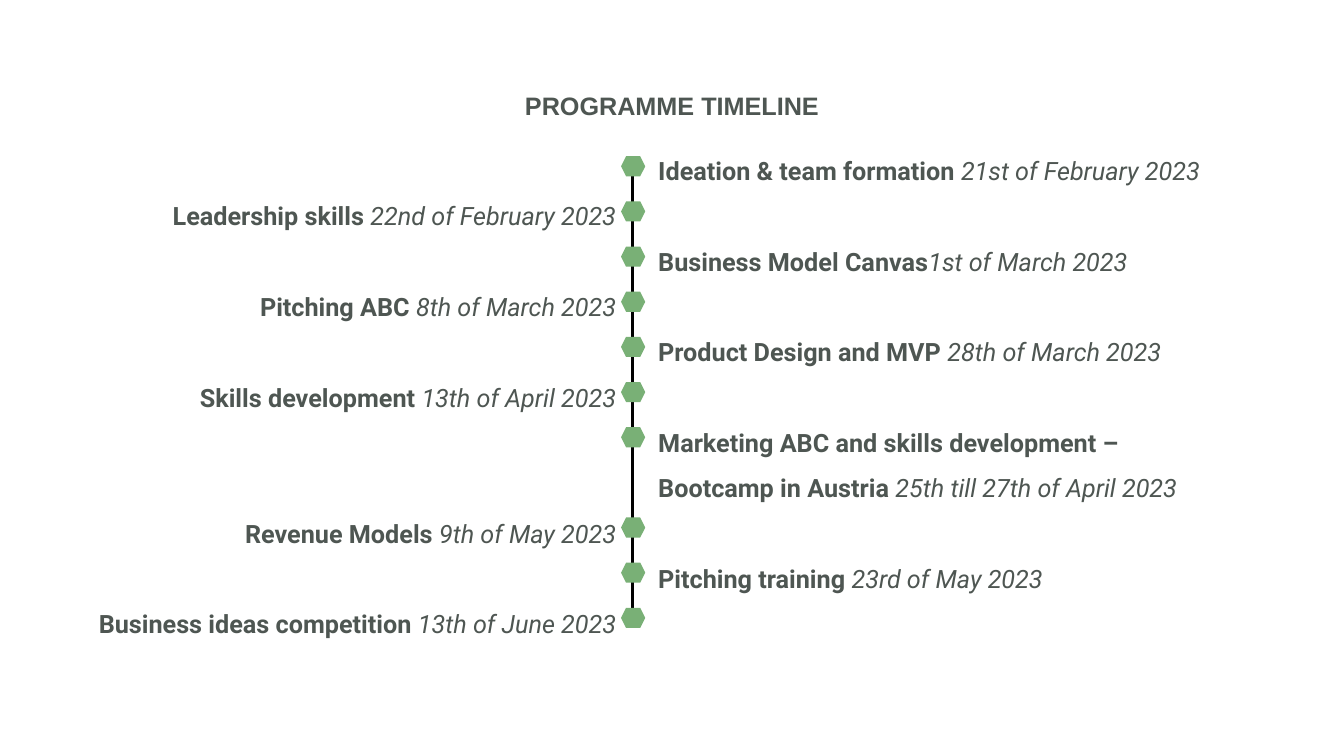
from dataclasses import dataclass

from lxml.etree import SubElement
from pptx import Presentation
from pptx.dml.color import RGBColor
from pptx.enum.shapes import MSO_CONNECTOR, MSO_SHAPE
from pptx.enum.text import MSO_ANCHOR, MSO_AUTO_SIZE, PP_ALIGN
from pptx.oxml.ns import qn
from pptx.util import Inches, Pt


@dataclass(frozen=True)
class Theme:
    """Colours, fonts and type sizes of the slide."""
    ink: RGBColor = RGBColor(0x4E, 0x56, 0x52)
    marker: RGBColor = RGBColor(0x79, 0xB0, 0x76)
    axis: RGBColor = RGBColor(0, 0, 0)
    heading_font: str = "Arial"
    body_font: str = "Roboto"
    size: float = 18
    line_spacing: float = 1.5
    row_pitch: float = 32.4


THEME = Theme()
MARKER_TOP, MARKER_PITCH = 1.55, 4.48 / 10

RIGHT_MILESTONES = [
    (0, "Ideation & team formation ", "21st of February 2023"),
    (2, "Business Model Canvas", "1st of March 2023"),
    (4, "Product Design and MVP ", "28th of March 2023"),
    (6, "Marketing ABC and skills development –", ""),
    (7, "Bootcamp in Austria ", "25th till 27th of April 2023"),
    (9, "Pitching training ", "23rd of May 2023"),
]
LEFT_MILESTONES = [
    (1, "Leadership skills ", "22nd of February 2023"),
    (3, "Pitching ABC ", "8th of March 2023"),
    (5, "Skills development ", "13th of April 2023"),
    (8, "Revenue Models ", "9th of May 2023"),
    (10, "Business ideas competition ", "13th of June 2023"),
]
MARKER_ROWS = [0, 1, 2, 3, 4, 5, 6, 8, 9, 10]


def add_text(paragraph, text, *, font=THEME.body_font, bold=False, italic=False):
    """Append one formatted run to a paragraph."""
    run = paragraph.add_run()
    run.text = text
    run.font.name = font
    run.font.size = Pt(THEME.size)
    run.font.bold = bold
    run.font.italic = italic
    run.font.color.rgb = THEME.ink


def set_paragraph(paragraph, align, space_before=0):
    """Set the alignment and spacing of a paragraph."""
    paragraph.alignment = align
    paragraph.line_spacing = THEME.line_spacing
    paragraph.space_before = Pt(space_before)


def add_title(slide, text):
    """Place and fill the title placeholder."""
    title = slide.shapes.title
    title.left, title.top = Inches(1.3), Inches(0.7)
    title.width, title.height = Inches(10.73), Inches(0.5)
    frame = title.text_frame
    frame.auto_size = MSO_AUTO_SIZE.NONE
    frame.vertical_anchor = MSO_ANCHOR.TOP
    set_paragraph(frame.paragraphs[0], PP_ALIGN.CENTER)
    add_text(frame.paragraphs[0], text, font=THEME.heading_font, bold=True)


def add_milestones(slide, milestones, left, top, width, height, align):
    """Add one side of the timeline, spaced by row number."""
    box = slide.shapes.add_textbox(Inches(left), Inches(top), Inches(width), Inches(height))
    frame = box.text_frame
    frame.word_wrap = True
    previous_row = None
    for row, topic, date in milestones:
        first = previous_row is None
        paragraph = frame.paragraphs[0] if first else frame.add_paragraph()
        skipped_rows = 0 if first else row - previous_row - 1
        set_paragraph(paragraph, align, skipped_rows * THEME.row_pitch)
        add_text(paragraph, topic, bold=True)
        if date:
            add_text(paragraph, date, italic=True)
        previous_row = row


def add_axis(slide, x, top, bottom):
    """Draw the vertical line of the timeline."""
    axis = slide.shapes.add_connector(
        MSO_CONNECTOR.STRAIGHT, Inches(x), Inches(top), Inches(x), Inches(bottom))
    axis.line.color.rgb = THEME.axis
    axis.line.width = Pt(2.25)
    SubElement(axis._element.spPr, qn("a:effectLst"))


def add_marker(slide, row):
    """Add the hexagon that marks a milestone row."""
    marker = slide.shapes.add_shape(
        MSO_SHAPE.HEXAGON, Inches(6.16), Inches(MARKER_TOP + row * MARKER_PITCH),
        Inches(0.24), Inches(0.2))
    marker.shadow.inherit = False
    marker.fill.solid()
    marker.fill.fore_color.rgb = THEME.marker
    marker.line.fill.background()


def main():
    """Build and save the programme timeline."""
    deck = Presentation()
    deck.slide_width, deck.slide_height = Inches(13.33), Inches(7.5)
    slide = deck.slides.add_slide(deck.slide_layouts[5])
    add_title(slide, "PROGRAMME TIMELINE")
    add_milestones(slide, RIGHT_MILESTONES, 6.43, 1.34, 5.72, 4.59, PP_ALIGN.LEFT)
    add_milestones(slide, LEFT_MILESTONES, 0.79, 1.79, 5.42, 5.05, PP_ALIGN.RIGHT)
    add_axis(slide, 6.27, 1.74, 6.1)
    for row in MARKER_ROWS:
        add_marker(slide, row)
    deck.save("out.pptx")


if __name__ == "__main__":
    main()
